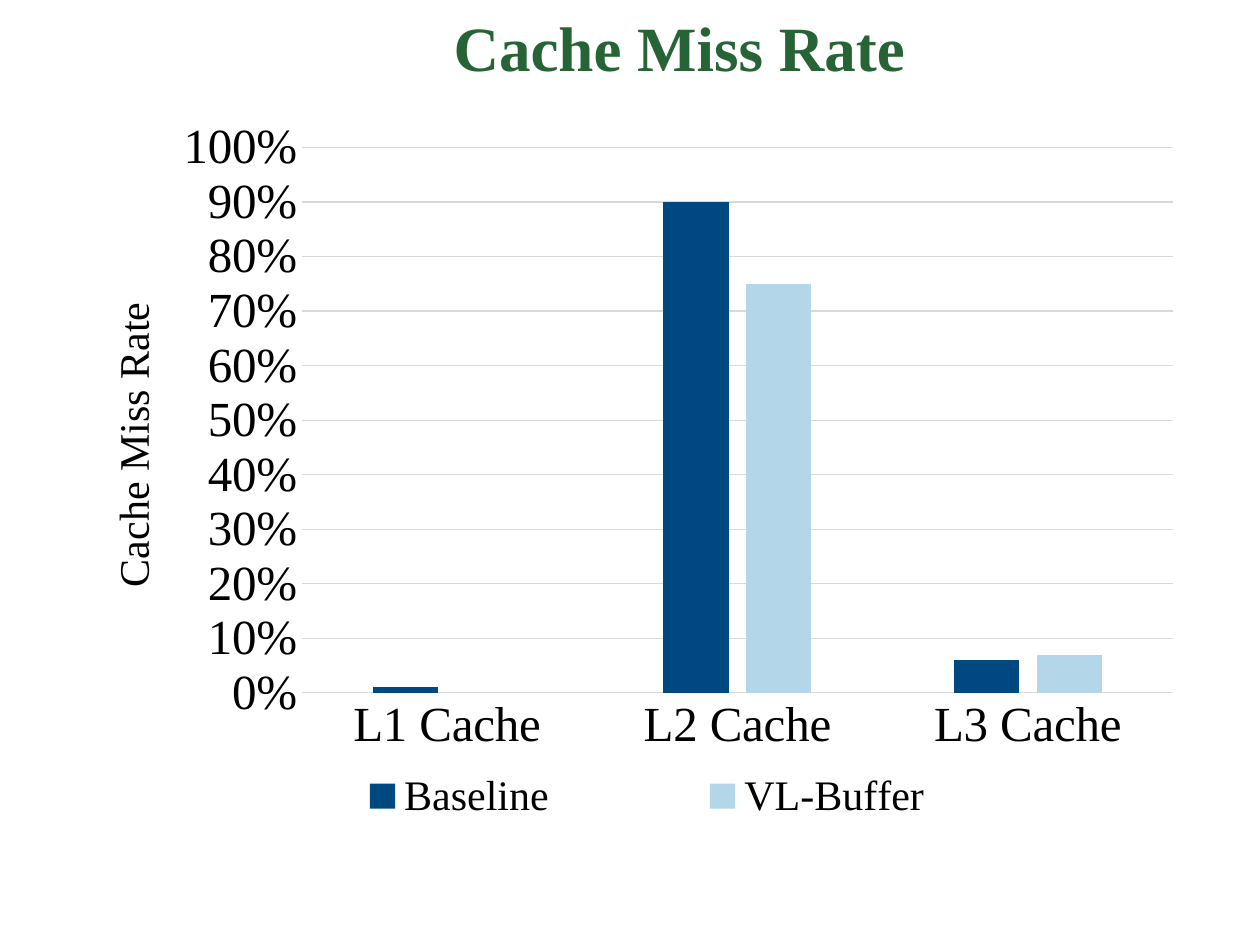
from pptx import Presentation
from pptx.chart.data import CategoryChartData
from pptx.dml.color import RGBColor
from pptx.enum.chart import XL_CHART_TYPE, XL_LEGEND_POSITION, XL_TICK_MARK
from pptx.enum.text import MSO_ANCHOR, PP_ALIGN
from pptx.oxml.ns import qn
from pptx.oxml.xmlchemy import OxmlElement
from pptx.util import Inches, Pt

COLORS = {
    "title": "266436",
    "text": "000000",
    "grid": "D9D9D9",
    "Baseline": "004880",
    "VL-Buffer": "B3D7E8",
}
MISS_RATES = {"Baseline": (0.01, 0.9, 0.06), "VL-Buffer": (0, 0.75, 0.07)}
CACHES = ("L1 Cache", "L2 Cache", "L3 Cache")
FONT = "Times New Roman"


def rgb(name):
    """Return the palette colour of the given name."""
    return RGBColor.from_string(COLORS[name])


def format_font(font, size, color="text", bold=False):
    """Apply the deck's typeface with a size, colour and weight."""
    font.name, font.size, font.bold = FONT, Pt(size), bold
    font.color.rgb = rgb(color)


def write(frame, text, align=None, spacing=None, **font_format):
    """Put formatted text into the first paragraph of a text frame."""
    paragraph = frame.paragraphs[0]
    paragraph.alignment, paragraph.line_spacing = align, spacing
    run = paragraph.add_run()
    run.text = text
    format_font(run.font, **font_format)


def set_layout(part, index, inner=False, **shares):
    """Place a chart part by shares of the chart's size."""
    for old in part.findall(qn("c:layout")):
        part.remove(old)
    layout, manual = OxmlElement("c:layout"), OxmlElement("c:manualLayout")
    settings = {"layoutTarget": "inner"} if inner else {}
    settings.update(xMode="edge", yMode="edge", **shares)
    for tag, value in settings.items():
        setting = OxmlElement(f"c:{tag}")
        setting.set("val", str(value))
        manual.append(setting)
    layout.append(manual)
    part.insert(index, layout)


def add_title(slide, left, top, width, height):
    """Place the slide title in the given box."""
    title = slide.shapes.title
    title.left, title.top, title.width, title.height = left, top, width, height
    frame = title.text_frame
    frame.margin_left = Inches(2.1)
    frame.vertical_anchor = MSO_ANCHOR.MIDDLE
    write(frame, "Cache Miss Rate", align=PP_ALIGN.LEFT, spacing=0.95,
          size=36, color="title", bold=True)


def format_axes(chart):
    """Style the cache axis and the miss rate axis."""
    cache_axis, rate_axis = chart.category_axis, chart.value_axis
    for axis in (cache_axis, rate_axis):
        axis.major_tick_mark = axis.minor_tick_mark = XL_TICK_MARK.NONE
        format_font(axis.tick_labels.font, size=28)
    rate_axis.minimum_scale, rate_axis.maximum_scale = 0, 1
    rate_axis.major_unit = 0.1
    rate_axis.tick_labels.number_format = "0%"
    rate_axis.tick_labels.number_format_is_linked = False
    rate_axis.format.line.fill.background()
    for line in (cache_axis.format.line, rate_axis.major_gridlines.format.line):
        line.color.rgb, line.width = rgb("grid"), Pt(0.75)
    write(rate_axis.axis_title.text_frame, "Cache Miss Rate", size=24)
    set_layout(rate_axis.axis_title._element, 1, x=0.03, y=0.26)


def add_miss_rate_chart(slide, left, top, width, height):
    """Place the clustered columns of miss rates in the given box."""
    data = CategoryChartData(number_format="0%")
    data.categories = CACHES
    for design, rates in MISS_RATES.items():
        data.add_series(design, rates)
    chart = slide.shapes.add_chart(
        XL_CHART_TYPE.COLUMN_CLUSTERED, left, top, width, height, data).chart
    chart.has_title = False
    format_font(chart.font, size=10)
    columns = chart.plots[0]
    columns.gap_width, columns.overlap = 219, -27
    columns.vary_by_categories = False
    for series in columns.series:
        series.format.fill.solid()
        series.format.fill.fore_color.rgb = rgb(series.name)
    format_axes(chart)
    chart.has_legend = True
    chart.legend.position = XL_LEGEND_POSITION.BOTTOM
    chart.legend.include_in_layout = False
    format_font(chart.legend.font, size=24)
    set_layout(chart.legend._element, 1, x=0.14, y=0.89, w=0.75, h=0.1)
    set_layout(chart._chartSpace.chart.plotArea, 0, inner=True,
               x=0.21, y=0.06, w=0.77, h=0.74)


def main():
    """Build and save the cache miss rate slide."""
    deck = Presentation()
    deck.slide_width, deck.slide_height = Inches(10), Inches(7.5)
    width, height = deck.slide_width, deck.slide_height
    slide = deck.slides.add_slide(deck.slide_layouts[5])
    add_title(slide, int(width * 0.15), Inches(-0.04),
              int(width * 0.9), Inches(0.87))
    add_miss_rate_chart(slide, Inches(0.51), Inches(0.82),
                        Inches(8.98), int(height * 0.78))
    deck.save("out.pptx")


if __name__ == "__main__":
    main()
